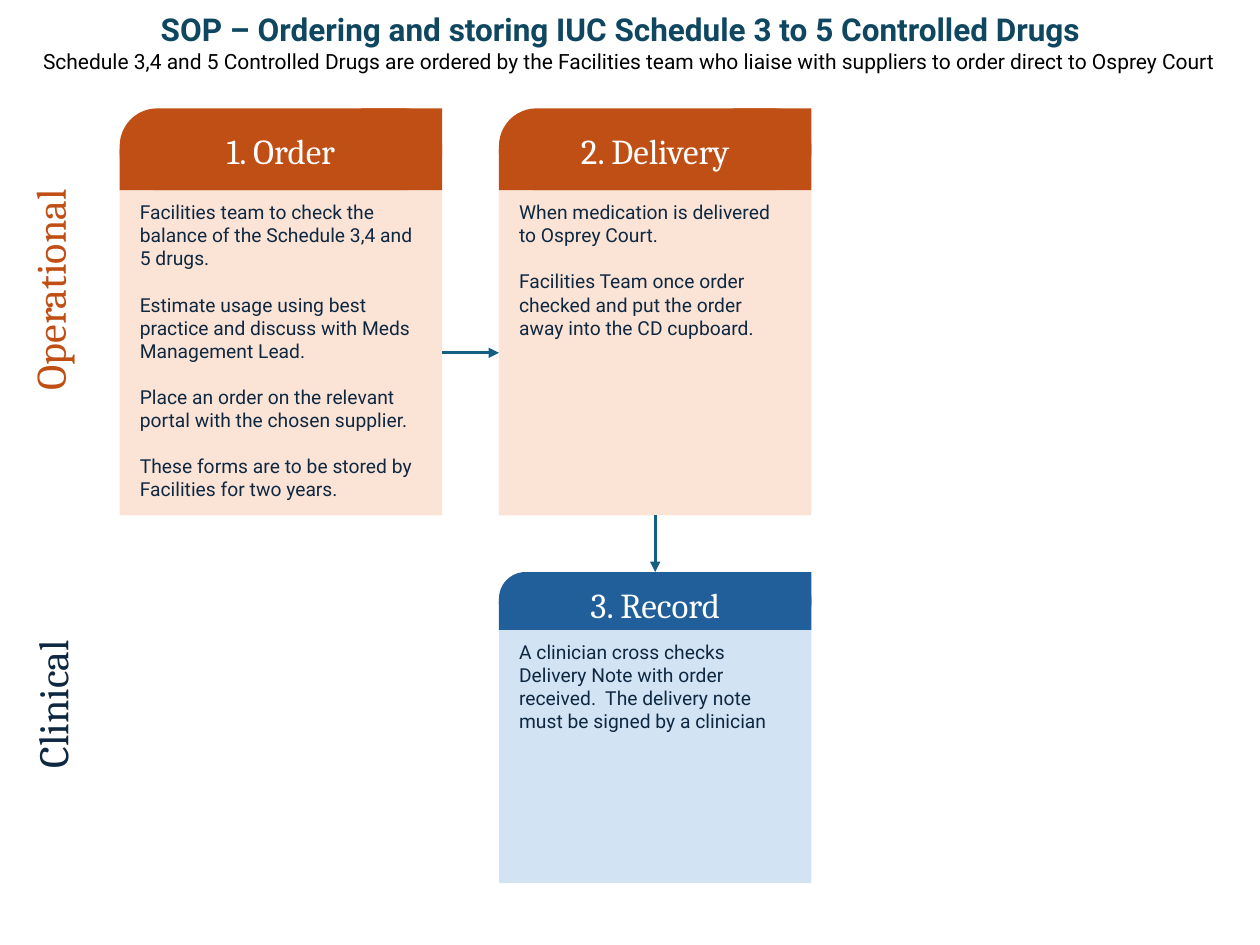
"""Build the controlled drugs ordering procedure as a one-slide flow chart."""
from lxml import etree
from pptx import Presentation, util as u
from pptx.dml.color import RGBColor
from pptx.enum import shapes, text
from pptx.oxml.ns import qn

COLOURS = {"rust": "C04F15", "peach": "FBE3D6", "blue": "215F9A", "sky": "D2E3F3",
           "navy": "0E2841", "title": "0F4761", "arrow": "156082",
           "white": "FFFFFF", "black": "000000"}
TITLE = "SOP – Ordering and storing IUC Schedule 3 to 5 Controlled Drugs"
SUBTITLE = ("Schedule 3,4 and 5 Controlled Drugs are ordered by the Facilities team "
            "who liaise with suppliers to order direct to Osprey Court")
COLUMNS = [(0.95, 2.56), (3.96, 2.48)]
ROWS = [
    {"name": "Operational", "label": (-0.9, 2.05, 2.58, 0.5), "ink": "rust",
     "head": "rust", "body": "peach", "top": 0.86, "head_height": 0.65,
     "body_height": 2.58, "caption": 0.12},
    {"name": "Clinical", "label": (-1.01, 5.34, 2.84, 0.5), "ink": "navy",
     "head": "blue", "body": "sky", "top": 4.54, "head_height": 0.46,
     "body_height": 2.01, "caption": 0.04},
]
STEPS = [
    ("1. Order", 0, 0, [
        "Facilities team to check the balance of the Schedule 3,4 and 5 drugs.",
        "Estimate usage using best practice and discuss with Meds Management Lead.",
        "Place an order on the relevant portal with the chosen supplier.",
        "These forms are to be stored by Facilities for two years."]),
    ("2. Delivery", 1, 0, [
        "When medication is delivered to Osprey Court.",
        "Facilities Team once order checked and put the order away into the CD cupboard."]),
    ("3. Record", 1, 1, [
        "A clinician cross checks Delivery Note with order received.  "
        "The delivery note must be signed by a clinician"]),
]
TOP, LEFT, BOTTOM, RIGHT = range(4)


def colour(name):
    return RGBColor.from_string(COLOURS[name])


def write(box, lines, font, size, ink, align, bold=False, gap=0):
    frame = box.text_frame
    frame.word_wrap = True
    frame.auto_size = text.MSO_AUTO_SIZE.NONE
    frame.vertical_anchor = text.MSO_ANCHOR.TOP
    frame.text = "\n".join(lines)
    for para in frame.paragraphs:
        para.alignment = align
        para.space_after = u.Pt(gap)
        for span in para.runs:
            span.font.name, span.font.size, span.font.bold = font, u.Pt(size), bold
            span.font.color.rgb = colour(ink)


def add_label(page, words, place, font, size, ink):
    box = page.shapes.add_textbox(*map(u.Inches, place))
    write(box, [words], font, size, ink, text.PP_ALIGN.CENTER)
    return box


def add_block(page, kind, place, fill):
    block = page.shapes.add_shape(kind, *map(u.Inches, place))
    block.shadow.inherit = False
    block.fill.solid()
    block.fill.fore_color.rgb = colour(fill)
    block.line.fill.background()
    return block


def add_step(page, heading, column, row, lines):
    left, width = COLUMNS[column]
    top, height = row["top"], row["head_height"]
    rectangle = shapes.MSO_SHAPE.RECTANGLE
    body = add_block(page, rectangle, (left, top + height, width, row["body_height"]), row["body"])
    frame = body.text_frame
    frame.margin_left = frame.margin_right = u.Inches(0.16)
    frame.margin_top = frame.margin_bottom = u.Inches(0.08)
    write(body, lines, "Roboto", 11, "navy", text.PP_ALIGN.LEFT, gap=13.2)

    square = width * 0.25
    add_block(page, rectangle, (left, top + height / 2, width - square, height / 2), row["head"])
    head = add_block(page, shapes.MSO_SHAPE.ROUNDED_RECTANGLE,
                     (left, top, width, height), row["head"])
    head.adjustments[0] = 0.46
    add_block(page, rectangle, (left + width - square, top, square, height), row["head"])
    add_label(page, heading, (left, top + row["caption"], width, 0.44), "Cambria", 20, "white")
    return head, body


def add_arrow(page, start, start_side, end, end_side):
    arrow = page.shapes.add_connector(shapes.MSO_CONNECTOR.STRAIGHT, 0, 0, 0, 0)
    arrow.begin_connect(start, start_side)
    arrow.end_connect(end, end_side)
    arrow.line.color.rgb = colour("arrow")
    arrow.line.width = u.Pt(1.5)
    etree.SubElement(arrow.line._get_or_add_ln(), qn("a:tailEnd"), type="triangle")
    etree.SubElement(arrow._element.spPr, qn("a:effectLst"))


def main():
    deck = Presentation()
    deck.slide_width, deck.slide_height = u.Inches(10), u.Inches(7.5)
    page = deck.slides.add_slide(deck.slide_layouts.get_by_name("Title Only"))

    title = page.shapes.title
    title.left, title.top, title.width, title.height = map(u.Inches, (0.5, 0.01, 8.85, 0.41))
    write(title, [TITLE], "Roboto", 18, "title", text.PP_ALIGN.CENTER, bold=True, gap=4)
    title.text_frame.paragraphs[0].line_spacing = 1.07
    title.text_frame.paragraphs[0].space_before = u.Pt(8)
    add_label(page, SUBTITLE, (0.23, 0.34, 9.53, 0.3), "Roboto", 12, "black")

    for row in ROWS:
        label = add_label(page, row["name"], row["label"], "Cambria", 24, row["ink"])
        label.rotation = 270

    order, delivery, record = [add_step(page, heading, column, ROWS[row], lines)
                               for heading, column, row, lines in STEPS]
    add_arrow(page, order[1], RIGHT, delivery[1], LEFT)
    add_arrow(page, delivery[1], BOTTOM, record[0], TOP)
    deck.save("out.pptx")


if __name__ == "__main__":
    main()
